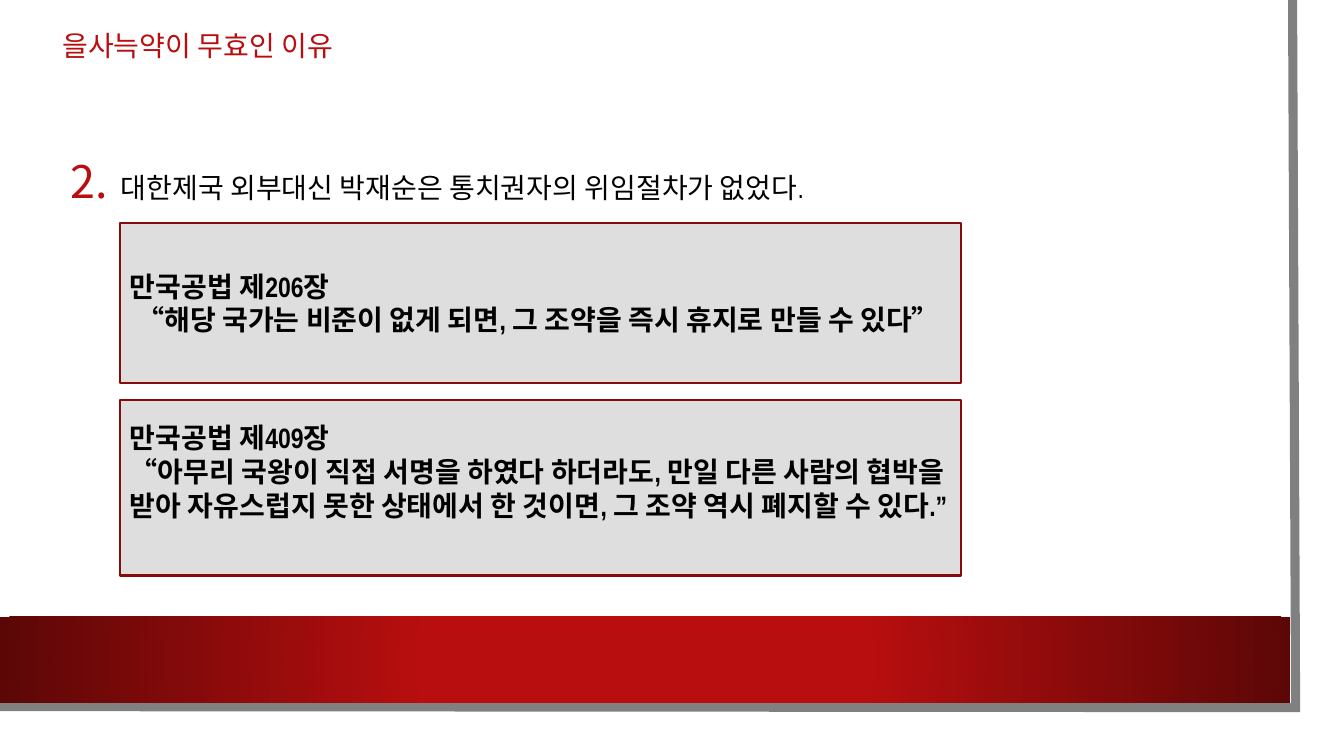
from dataclasses import dataclass

from lxml import etree
from pptx import Presentation
from pptx import util as u
from pptx.dml.color import RGBColor
from pptx.enum import shapes, text
from pptx.oxml.ns import qn

RED = RGBColor(0xB8, 0x0E, 0x0F)
DARK_RED = RGBColor(0x5C, 0x07, 0x07)
BORDER_RED = RGBColor(0x88, 0x0A, 0x0B)
PANEL_GRAY = RGBColor(0xDE, 0xDE, 0xDE)
EDGE_GRAY = RGBColor(0x80, 0x80, 0x80)
WHITE = RGBColor(0xFF, 0xFF, 0xFF)
BLACK = RGBColor(0, 0, 0)

BODY_FONT = {"name": "Arial Narrow", "size": u.Pt(20)}


@dataclass
class Box:
    left: float
    top: float
    width: float
    height: float

    def emu(self) -> tuple:
        return tuple(u.Inches(v) for v in (self.left, self.top, self.width, self.height))


@dataclass
class Quote:
    box: Box
    lines: list[str]
    bottom_inset: float = 0.05


QUOTES = [
    Quote(Box(1.19, 2.21, 8.34, 1.59), [
        "만국공법 제206장",
        " “해당 국가는 비준이 없게 되면, 그 조약을 즉시 휴지로 만들 수 있다”",
    ]),
    Quote(Box(1.19, 3.97, 8.34, 1.74), [
        "만국공법 제409장",
        "“아무리 국왕이 직접 서명을 하였다 하더라도, 만일 다른 사람의 협박을 받아 "
        "자유스럽지 못한 상태에서 한 것이면, 그 조약 역시 폐지할 수 있다.”",
    ], bottom_inset=0.38),
]


def set_font(font, color: RGBColor, **extra) -> None:
    for key, value in {**BODY_FONT, **extra}.items():
        setattr(font, key, value)
    font.color.rgb = color


def add_rect(s, box: Box):
    sp = s.shapes.add_shape(shapes.MSO_SHAPE.RECTANGLE, *box.emu())
    sp.shadow.inherit = False
    sp.line.fill.background()
    return sp


def add_text(s, box: Box, content: str, anchor):
    tf = s.shapes.add_textbox(*box.emu()).text_frame
    tf.word_wrap = True
    tf.vertical_anchor = anchor
    p = tf.paragraphs[0]
    p.text = content
    return p


def add_page_edge(s) -> None:
    points = [(u.Inches(x), u.Inches(y)) for x, y in ((12.82, 0), (12.85, 7.02), (-0.03, 7.01))]
    builder = s.shapes.build_freeform(*points[0], scale=1.0)
    builder.add_line_segments(points[1:], close=False)
    sp = builder.convert_to_shape()
    sp.shadow.inherit = False
    sp.fill.background()
    sp.line.color.rgb = EDGE_GRAY
    sp.line.width = u.Pt(6.5)
    etree.SubElement(sp.line._get_or_add_ln(), qn("a:miter"), lim="800000")


def add_band(s, box: Box) -> None:
    fill = add_rect(s, box).fill
    fill.gradient()
    for stop, position, color in zip(fill.gradient_stops, (0.34, 1), (RED, DARK_RED)):
        stop.position = position
        stop.color.rgb = color
    # Radial gradient from the centre
    grad = fill._xPr.find(qn("a:gradFill"))
    radial = etree.Element(qn("a:path"), path="circle")
    etree.SubElement(radial, qn("a:fillToRect"), dict.fromkeys("ltrb", "50000"))
    grad.replace(grad.find(qn("a:lin")), radial)


def add_numbered(p, start: int) -> None:
    pPr = p._p.get_or_add_pPr()
    pPr.set("marL", str(u.Inches(0.5)))
    pPr.set("indent", str(-u.Inches(0.5)))
    color = etree.SubElement(pPr, qn("a:buClr"))
    etree.SubElement(color, qn("a:srgbClr"), val=str(RED))
    etree.SubElement(pPr, qn("a:buSzPct"), val="160000")
    etree.SubElement(pPr, qn("a:buAutoNum"), type="arabicPeriod", startAt=str(start))


def add_quote(s, quote: Quote) -> None:
    sp = add_rect(s, quote.box)
    sp.fill.solid()
    sp.fill.fore_color.rgb = PANEL_GRAY
    sp.line.color.rgb = BORDER_RED
    sp.line.width = u.Pt(1.5)
    tf = sp.text_frame
    tf.word_wrap = True
    tf.vertical_anchor = text.MSO_ANCHOR.MIDDLE
    tf.margin_bottom = u.Inches(quote.bottom_inset)
    for i, line in enumerate(quote.lines):
        p = tf.paragraphs[0] if i == 0 else tf.add_paragraph()
        p.alignment = text.PP_ALIGN.LEFT
        r = p.add_run()
        r.text = line
        set_font(r.font, BLACK, bold=True)


def main() -> None:
    prs = Presentation()
    prs.slide_width, prs.slide_height = u.Inches(13.33), u.Inches(7.5)
    s = prs.slides.add_slide(prs.slide_layouts[6])

    # Page sheet, its edge and the red band
    page = add_rect(s, Box(0, 0, 13.1, 7.27))
    page.fill.solid()
    page.fill.fore_color.rgb = WHITE
    add_page_edge(s)
    add_band(s, Box(0, 6.12, 12.8, 0.85))

    # Title
    p = add_text(s, Box(0.52, 0.1, 3.16, 0.74), "을사늑약이 무효인 이유", text.MSO_ANCHOR.MIDDLE)
    p.line_spacing = 0.9
    set_font(p.runs[0].font, RED)

    # Numbered reason
    p = add_text(s, Box(0.6, 1.4, 11.37, 0.67),
                 "대한제국 외부대신 박재순은 통치권자의 위임절차가 없었다.", text.MSO_ANCHOR.BOTTOM)
    add_numbered(p, start=2)
    p.line_spacing = 1.2
    set_font(p.runs[0].font, BLACK)

    # Quoted articles
    for quote in QUOTES:
        add_quote(s, quote)

    prs.save("out.pptx")


if __name__ == "__main__":
    main()
